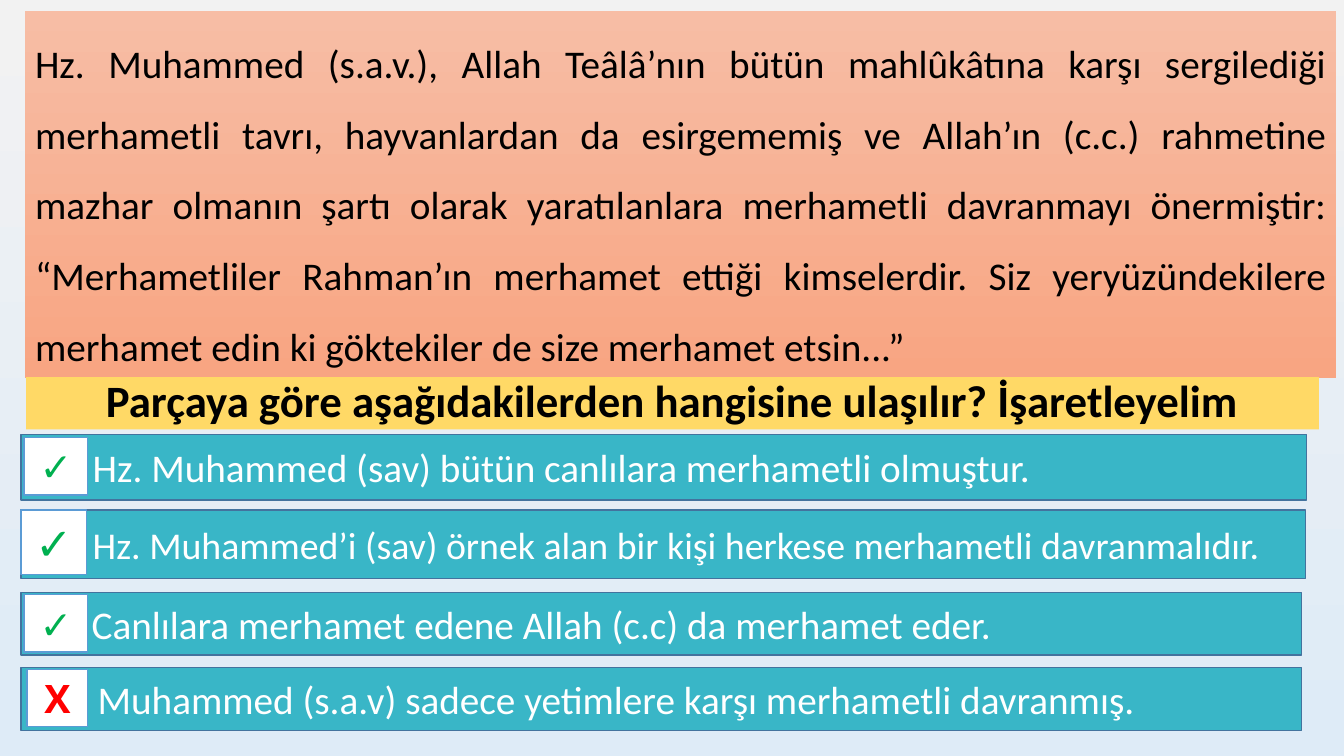
import pptx
import pptx.dml.color
import pptx.enum.shapes
import pptx.enum.text
import pptx.util
from dataclasses import dataclass

Inches = pptx.util.Inches
Pt = pptx.util.Pt
ALIGN = pptx.enum.text.PP_ALIGN
ANCHOR = pptx.enum.text.MSO_ANCHOR


@dataclass(frozen=True)
class Theme:
    body_font: str = "Calibri"
    mark_font: str = "Open Sans"
    backdrop: tuple = ("F2F2F2", "DEEBF7")
    passage: tuple = ("F7BDA5", "F8A582")
    question: str = "FFD966"
    answer: str = "39B6C7"
    answer_line: str = "43739E"
    mark_line: str = "5B9BD5"
    black: str = "000000"
    white: str = "FFFFFF"
    right: str = "00B050"
    wrong: str = "FF0000"
    text_size: int = 28
    small_size: int = 27
    large_size: int = 32


theme = Theme()


def paint(fill, colors):
    """Fill with one colour, or with a gradient from top to bottom for a pair."""
    if isinstance(colors, str):
        fill.solid()
        fill.fore_color.rgb = pptx.dml.color.RGBColor.from_string(colors)
        return
    fill.gradient()
    fill.gradient_angle = 270
    for stop, color in zip(fill.gradient_stops, colors):
        stop.color.rgb = pptx.dml.color.RGBColor.from_string(color)


def add_panel(place, colors, text, size, color, align, line=None, bold=False,
              font=theme.body_font, anchor=ANCHOR.MIDDLE, spacing=1.0, inset=0.1):
    """Add a filled rectangle holding one paragraph."""
    box = page.shapes.add_shape(pptx.enum.shapes.MSO_SHAPE.RECTANGLE,
                                *[Inches(length) for length in place])
    box.shadow.inherit = False
    paint(box.fill, colors)
    if line:
        paint(box.line.fill, line)
        box.line.width = Pt(1)
    else:
        box.line.fill.background()
    frame = box.text_frame
    frame.word_wrap = True
    frame.vertical_anchor = anchor
    frame.margin_left = Inches(inset)
    para = frame.paragraphs[0]
    para.alignment = align
    para.line_spacing = spacing
    span = para.add_run()
    span.text = text
    span.font.name = font
    span.font.size = Pt(size)
    span.font.bold = bold
    paint(span.font.fill, color)


deck = pptx.Presentation()
deck.slide_width = Inches(13.33)
deck.slide_height = Inches(7.5)
page = deck.slides.add_slide(deck.slide_layouts[6])
paint(page.background.fill, theme.backdrop)

add_panel(
    (0.25, 0.11, 13, 3.64), theme.passage,
    "Hz. Muhammed (s.a.v.), Allah Teâlâ’nın bütün mahlûkâtına karşı sergilediği "
    "merhametli tavrı, hayvanlardan da esirgememiş ve Allah’ın (c.c.) rahmetine "
    "mazhar olmanın şartı olarak yaratılanlara merhametli davranmayı önermiştir: "
    "“Merhametliler Rahman’ın merhamet ettiği kimselerdir. Siz yeryüzündekilere "
    "merhamet edin ki göktekiler de size merhamet etsin...”",
    theme.text_size, theme.black, ALIGN.JUSTIFY, anchor=ANCHOR.TOP, spacing=1.5)

add_panel(
    (0.26, 3.74, 12.82, 0.52), theme.question,
    "Parçaya göre aşağıdakilerden hangisine ulaşılır? İşaretleyelim",
    theme.large_size, theme.black, ALIGN.CENTER, bold=True, spacing=0.9)

# Answer place, text, size and inset; then mark place, symbol, size and colour
answers = [
    ((0.21, 4.31, 12.75, 0.65),
     "Hz. Muhammed (sav) bütün canlılara merhametli olmuştur.", theme.text_size, 0.71,
     (0.24, 4.34, 0.63, 0.57), "✓", theme.text_size, theme.right),
    ((0.21, 5.06, 12.74, 0.68),
     "Hz. Muhammed’i (sav) örnek alan bir kişi herkese merhametli davranmalıdır.",
     theme.small_size, 0.71,
     (0.21, 5.06, 0.65, 0.64), "✓", theme.large_size, theme.right),
    ((0.21, 5.88, 12.7, 0.62),
     "Canlılara merhamet edene Allah (c.c) da merhamet eder.", theme.text_size, 0.7,
     (0.24, 5.9, 0.63, 0.57), "✓", theme.text_size, theme.right),
    ((0.21, 6.62, 12.7, 0.63),
     "Muhammed (s.a.v) sadece yetimlere karşı merhametli davranmış.",
     theme.text_size, 0.76,
     (0.27, 6.64, 0.6, 0.57), "X", theme.text_size, theme.wrong),
]
for place, text, size, inset, mark_place, mark, mark_size, mark_color in answers:
    add_panel(place, theme.answer, text, size, theme.white, ALIGN.LEFT,
              line=theme.answer_line, inset=inset)
    add_panel(mark_place, theme.white, mark, mark_size, mark_color, ALIGN.CENTER,
              line=theme.mark_line, bold=True, font=theme.mark_font)

deck.save("out.pptx")
